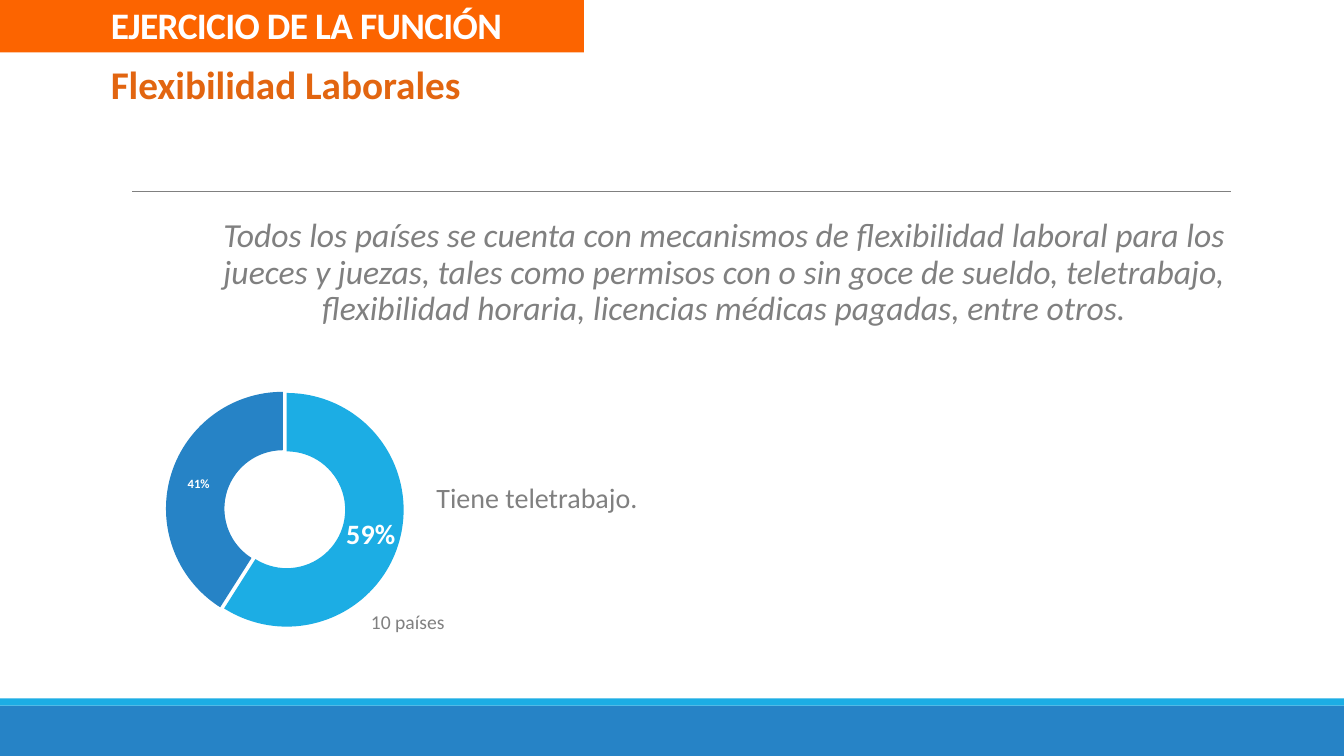
"""Build the slide on flexible working arrangements with its telework doughnut."""
from lxml import etree
from pptx import Presentation
from pptx.chart import data as chart_data
from pptx.dml import color
from pptx.enum import chart as chart_enum, shapes, text
from pptx.oxml import ns
from pptx.util import Inches, Pt

COLORS = {"blue": "2683C6", "cyan": "1CADE4", "gray": "808080", "banner": "FC6400",
          "orange": "E26510", "white": "FFFFFF", "black": "000000"}
FONT = "Calibri"
TITLE = "EJERCICIO DE LA FUNCIÓN"
STATEMENT = ("Todos los países se cuenta con mecanismos de flexibilidad laboral para los "
             "jueces y juezas, tales como permisos con o sin goce de sueldo, teletrabajo, "
             "flexibilidad horaria, licencias médicas pagadas, entre otros.")
FOOTER_BARS = [((0, 7, 13.33, 0.5), "blue"), ((0, 6.93, 13.33, 0.07), "cyan")]
CAPTIONS = [
    ("Flexibilidad Laborales", (1, 0.55, 3.71, 0.57), 28, "orange", True),
    ("Tiene teletrabajo.", (4.23, 4.72, 2.22, 0.44), 20, "gray", False),
    ("10 países", (3.58, 6, 0.94, 0.34), 14, "gray", False),
]
SLICES = [("1", 59, "cyan"), ("2", 41, "blue")]
PLOT_AREA = {"x": 0.285, "y": 0.113, "w": 0.464, "h": 0.773}


def rgb(name):
    return color.RGBColor.from_string(COLORS[name])


def inches(box):
    return [Inches(length) for length in box]


def place(shape, box):
    shape.left, shape.top, shape.width, shape.height = inches(box)


def style(font, size, tone, bold=False, italic=False):
    font.name, font.size, font.bold, font.italic = FONT, Pt(size), bold, italic
    font.color.rgb = rgb(tone)


def add_run(paragraph, words, *look):
    run = paragraph.add_run()
    run.text = words
    style(run.font, *look)
    return run


def chart_node(parent, tag, **attributes):
    node = etree.SubElement(parent, ns.qn("c:" + tag))
    for name, value in attributes.items():
        node.set(name, str(value))
    return node


def add_footer(slide):
    for box, tone in FOOTER_BARS:
        bar = slide.shapes.add_shape(shapes.MSO_SHAPE.RECTANGLE, *inches(box))
        bar.shadow.inherit = False
        bar.fill.solid()
        bar.fill.fore_color.rgb = rgb(tone)
        bar.line.fill.background()


def add_rule(slide):
    rule = slide.shapes.add_connector(
        shapes.MSO_CONNECTOR.STRAIGHT, *inches((1.31, 1.9, 12.21, 1.9)))
    rule.line.color.rgb = rgb("gray")
    rule.line.width = Pt(0.5)
    etree.SubElement(rule.element.spPr, ns.qn("a:effectLst"))


def fill_title(title):
    place(title, (0, 0, 5.79, 0.52))
    title.fill.solid()
    title.fill.fore_color.rgb = rgb("banner")
    frame = title.text_frame
    frame.auto_size = text.MSO_AUTO_SIZE.NONE
    frame.vertical_anchor = text.MSO_ANCHOR.BOTTOM
    frame.margin_left = Inches(1.1)
    paragraph = frame.paragraphs[0]
    paragraph.alignment = text.PP_ALIGN.LEFT
    paragraph.line_spacing = 0.85
    run = add_run(paragraph, TITLE, 26.7, "white", True)
    run.font._element.set("spc", "-50")


def fill_statement(body):
    place(body, (1.95, 2.12, 10.24, 1.44))
    frame = body.text_frame
    frame.auto_size = text.MSO_AUTO_SIZE.NONE
    frame.margin_left = frame.margin_right = 0
    paragraph = frame.paragraphs[0]
    paragraph.alignment = text.PP_ALIGN.CENTER
    paragraph.line_spacing = 0.9
    paragraph.space_before, paragraph.space_after = Pt(2), Pt(4)
    properties = paragraph._p.get_or_add_pPr()
    properties.set("marL", str(Inches(0.22)))
    properties.set("indent", "0")
    etree.SubElement(properties, ns.qn("a:buNone"))
    add_run(paragraph, STATEMENT, 24, "gray", False, True)


def add_doughnut(slide):
    data = chart_data.CategoryChartData()
    data.categories = [name for name, _, _ in SLICES]
    data.add_series("Series 1", [value for _, value, _ in SLICES])
    chart = slide.shapes.add_chart(
        chart_enum.XL_CHART_TYPE.DOUGHNUT, *inches((0.26, 3.56, 5, 3)), data).chart
    chart.has_title = chart.has_legend = False
    style(chart.font, 10, "black")
    chart.plots[0].vary_by_categories = True
    series = chart.plots[0].series[0]
    for index, (_, _, tone) in enumerate(SLICES):
        point_format = series.points[index].format
        point_format.fill.solid()
        point_format.fill.fore_color.rgb = rgb(tone)
        point_format.line.fill.background()

    second_slice = series._element.findall(ns.qn("c:dPt"))[1]
    explosion = chart_node(second_slice, "explosion", val=7)
    second_slice.find(ns.qn("c:spPr")).addprevious(explosion)

    labels = series.data_labels
    labels.show_percentage, labels.show_value = True, False
    style(labels.font, 9, "white", True)
    style(series.points[0].data_label.font, 20, "white", True)
    large_label = next(series._element.iter(ns.qn("c:dLbl")))
    for tag, shown in (("showVal", "0"), ("showPercent", "1")):
        large_label.find(ns.qn("c:" + tag)).set("val", shown)

    plot_area = next(chart._chartSpace.iter(ns.qn("c:plotArea")))
    for layout in plot_area.findall(ns.qn("c:layout")):
        plot_area.remove(layout)
    layout = chart_node(plot_area, "layout")
    plot_area.insert(0, layout)
    manual = chart_node(layout, "manualLayout")
    chart_node(manual, "layoutTarget", val="inner")
    for axis in "xy":
        chart_node(manual, axis + "Mode", val="edge")
    for side, share in PLOT_AREA.items():
        chart_node(manual, side, val=share)


def add_captions(slide):
    for words, box, size, tone, bold in CAPTIONS:
        frame = slide.shapes.add_textbox(*inches(box)).text_frame
        frame.word_wrap = False
        frame.auto_size = text.MSO_AUTO_SIZE.SHAPE_TO_FIT_TEXT
        add_run(frame.paragraphs[0], words, size, tone, bold)


def main():
    presentation = Presentation()
    presentation.slide_width, presentation.slide_height = inches((13.33, 7.5))
    slide = presentation.slides.add_slide(presentation.slide_layouts[1])
    add_footer(slide)
    add_rule(slide)
    fill_title(slide.shapes.title)
    fill_statement(slide.placeholders[1])
    add_doughnut(slide)
    add_captions(slide)
    presentation.save("out.pptx")


if __name__ == "__main__":
    main()
